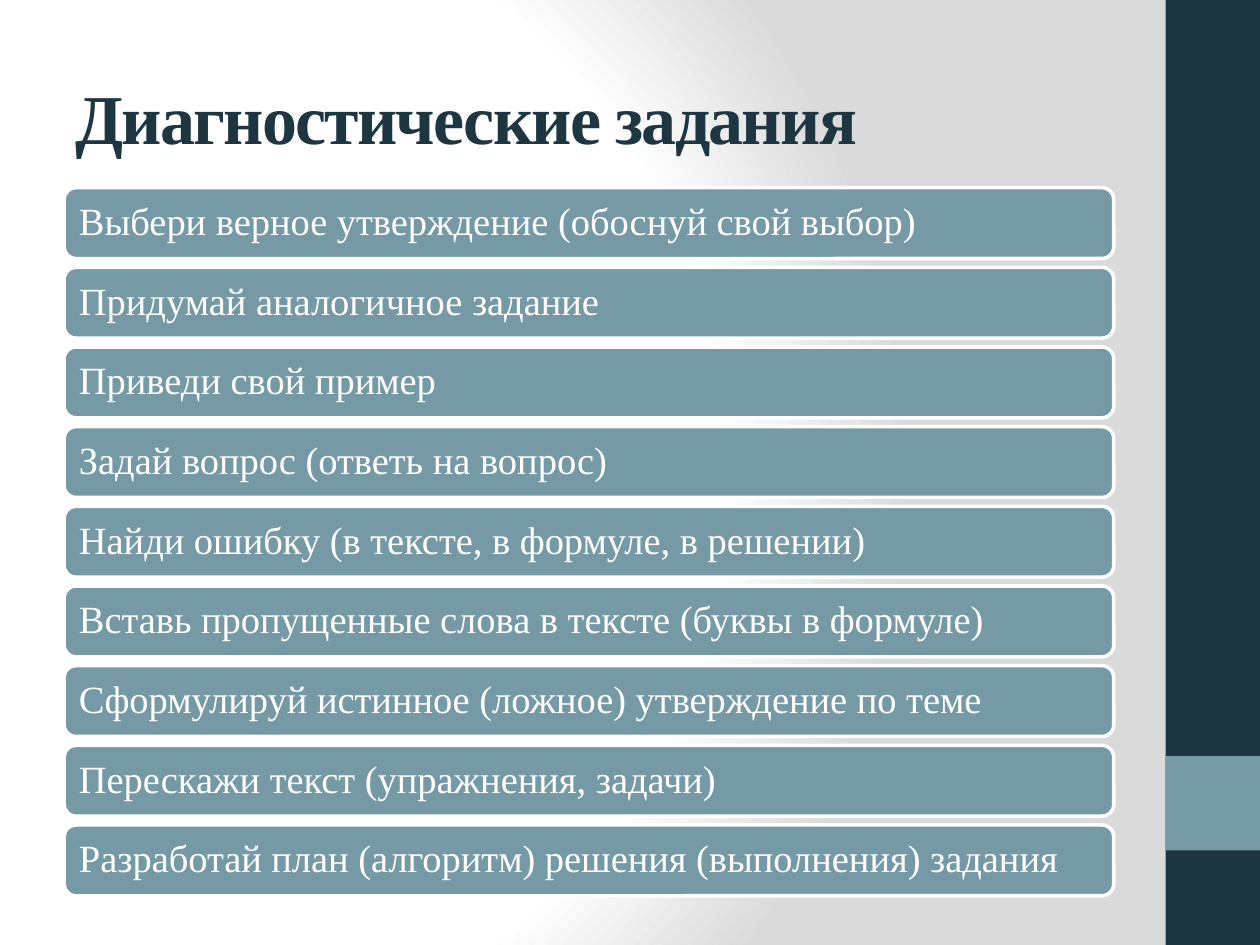
from dataclasses import dataclass

from pptx import Presentation
from pptx.dml.color import RGBColor
from pptx.enum.shapes import MSO_SHAPE as Shape
from pptx.enum.text import MSO_ANCHOR as Anchor, PP_ALIGN as Align
from pptx.oxml import parse_xml
from pptx.oxml.ns import nsdecls
from pptx.util import Inches, Pt


@dataclass(frozen=True)
class Theme:
    font: str = "Times New Roman"
    dark: str = "1D3641"
    accent: str = "759AA5"
    light: str = "FFFFFF"
    shade: str = "DADADA"
    title_size: int = 40
    task_size: int = 22
    outline: int = 2


@dataclass(frozen=True)
class Area:
    """A rectangle in inches."""
    left: float
    top: float
    width: float
    height: float

    def lengths(self) -> tuple:
        return tuple(map(Inches, (self.left, self.top, self.width, self.height)))

    def row(self, index: int, count: int, gap: float) -> "Area":
        height = (self.height - gap * (count - 1)) / count
        return Area(self.left, self.top + index * (height + gap), self.width, height)


THEME = Theme()
WIDTH, HEIGHT = 10, 7.5
UNIT = HEIGHT / 10  # width of the side band and side of its square

SIDE_BAND = Area(WIDTH - UNIT, 0, UNIT, HEIGHT)
SIDE_SQUARE = Area(WIDTH - UNIT, 8 * UNIT, UNIT, UNIT)
TITLE_AREA = Area(0.5, 0.3, 8.33, 1.25)
TASK_AREA = Area(0.51, 1.49, 8.33, 5.62)
TASK_GAP = 0.07

TITLE = "Диагностические задания"
TASKS = [
    "Выбери верное утверждение (обоснуй свой выбор)",
    "Придумай аналогичное задание",
    "Приведи свой пример",
    "Задай вопрос (ответь на вопрос)",
    "Найди ошибку (в тексте, в формуле, в решении)",
    "Вставь пропущенные слова в тексте (буквы в формуле)",
    "Сформулируй истинное (ложное) утверждение по теме",
    "Перескажи текст (упражнения, задачи)",
    "Разработай план (алгоритм) решения (выполнения) задания",
]


def paint_background(page) -> None:
    stops = [(0, THEME.light), (75, THEME.light), (100, THEME.shade)]
    stop_xml = "".join(
        f'<a:gs pos="{share * 1000}"><a:srgbClr val="{color}"/></a:gs>'
        for share, color in stops)
    page.element.cSld.insert(0, parse_xml(
        f'<p:bg {nsdecls("p", "a")}><p:bgPr><a:gradFill rotWithShape="1">'
        f'<a:gsLst>{stop_xml}</a:gsLst><a:path path="circle">'
        '<a:fillToRect l="20000" t="50000" r="100000" b="50000"/></a:path>'
        '</a:gradFill><a:effectLst/></p:bgPr></p:bg>'))


def add_box(page, kind: Shape, area: Area, color: str):
    box = page.shapes.add_shape(kind, *area.lengths())
    box.shadow.inherit = False
    box.fill.solid()
    box.fill.fore_color.rgb = RGBColor.from_string(color)
    box.line.fill.background()
    return box


def write(box, text: str, size: int, color: str, bold: bool = False):
    frame = box.text_frame
    frame.word_wrap = True
    frame.vertical_anchor = Anchor.MIDDLE
    para = frame.paragraphs[0]
    para.alignment = Align.LEFT
    span = para.add_run()
    span.text = text
    span.font.name = THEME.font
    span.font.size = Pt(size)
    span.font.bold = bold
    span.font.color.rgb = RGBColor.from_string(color)
    return para, span


def add_title(page) -> None:
    box = page.shapes.title
    box.left, box.top, box.width, box.height = TITLE_AREA.lengths()
    _, span = write(box, TITLE, THEME.title_size, THEME.dark, bold=True)
    span.font._element.set("spc", "-100")  # tighter letter spacing


def add_task(page, text: str, area: Area) -> None:
    box = add_box(page, Shape.ROUNDED_RECTANGLE, area, THEME.accent)
    box.line.color.rgb = RGBColor.from_string(THEME.light)
    box.line.width = Pt(THEME.outline)
    frame = box.text_frame
    frame.margin_left = frame.margin_right = Inches(0.09)
    frame.margin_top = frame.margin_bottom = Inches(0.09)
    para, _ = write(box, text, THEME.task_size, THEME.light)
    para.line_spacing = 0.9


def main() -> None:
    deck = Presentation()
    deck.slide_width, deck.slide_height = Inches(WIDTH), Inches(HEIGHT)
    page = deck.slides.add_slide(deck.slide_layouts.get_by_name("Title Only"))

    # Backdrop and side band
    paint_background(page)
    add_box(page, Shape.RECTANGLE, SIDE_BAND, THEME.dark)
    add_box(page, Shape.RECTANGLE, SIDE_SQUARE, THEME.accent)

    # Title and the stack of tasks
    add_title(page)
    for index, text in enumerate(TASKS):
        add_task(page, text, TASK_AREA.row(index, len(TASKS), TASK_GAP))

    deck.save("out.pptx")


if __name__ == "__main__":
    main()
